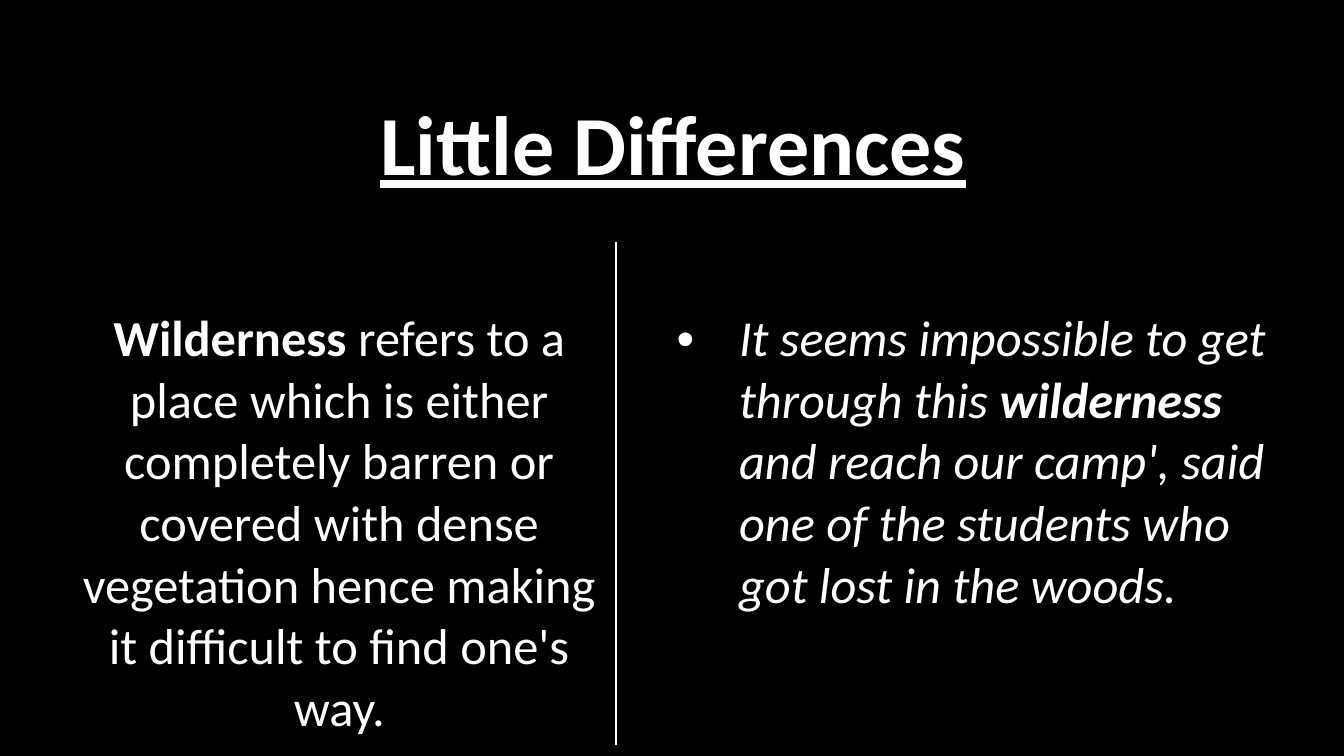
from pptx import Presentation
from pptx.dml.color import RGBColor
from pptx.enum.text import MSO_ANCHOR, PP_ALIGN
from pptx.oxml.ns import qn
from pptx.util import Inches, Pt
from lxml import etree

CENTER, LEFT = PP_ALIGN.CENTER, PP_ALIGN.LEFT
TOP = MSO_ANCHOR.TOP
BLANK_LAYOUT = 6
EDGES = ("lnL", "lnR", "lnT", "lnB")


def color(hex_value):
    return RGBColor.from_string(hex_value)


class SlideBuilder:
    font = "Calibri"
    text_color = "FFFFFF"
    background = "000000"
    cell_top = 0.66  # one 36 pt line above the text

    def __init__(self, presentation):
        self.slide = presentation.slides.add_slide(presentation.slide_layouts[BLANK_LAYOUT])
        fill = self.slide.background.fill
        fill.solid()
        fill.fore_color.rgb = color(self.background)

    def table(self, left, top, widths, heights):
        frame = self.slide.shapes.add_table(
            len(heights), len(widths), Inches(left), Inches(top),
            Inches(sum(widths)), Inches(sum(heights)))
        table = frame.table
        table.first_row = table.horz_banding = False
        for column, width in zip(table.columns, widths):
            column.width = Inches(width)
        for row, height in zip(table.rows, heights):
            row.height = Inches(height)
        return table

    def cell_style(self, cell, lined_edge=None):
        properties = cell._tc.get_or_add_tcPr()
        for edge in EDGES:
            line = etree.SubElement(properties, qn(f"a:{edge}"), w=str(Pt(1)))
            if edge == lined_edge:
                solid = etree.SubElement(line, qn("a:solidFill"))
                etree.SubElement(solid, qn("a:srgbClr"), val=self.text_color)
            else:
                etree.SubElement(line, qn("a:noFill"))
        cell.fill.background()
        cell.vertical_anchor = TOP
        cell.margin_top = Inches(self.cell_top)

    def text(self, cell, runs, size=36, align=CENTER, **common):
        paragraph = cell.text_frame.paragraphs[0]
        paragraph.alignment = align
        for words, bold in runs:
            run = paragraph.add_run()
            run.text = words
            font = run.font
            font.name, font.size, font.bold = self.font, Pt(size), bold
            font.color.rgb = color(self.text_color)
            for name, value in common.items():
                setattr(font, name, value)
        return paragraph

    def bullet(self, paragraph, margin, indent):
        paragraph.level = 1
        properties = paragraph._p.get_or_add_pPr()
        properties.set("marL", str(Inches(margin)))
        properties.set("indent", str(Inches(indent)))
        etree.SubElement(properties, qn("a:buFont"), typeface="Arial")
        etree.SubElement(properties, qn("a:buChar"), char="•")


def main():
    presentation = Presentation()
    presentation.slide_width, presentation.slide_height = Inches(13.33), Inches(7.5)
    builder = SlideBuilder(presentation)

    # Table: heading across the top, definition and example below
    table = builder.table(0.62, 0.29, widths=(5.49, 6.62), heights=(2.11, 4.9))
    heading, heading_end = table.cell(0, 0), table.cell(0, 1)
    definition, example = table.cell(1, 0), table.cell(1, 1)
    heading.merge(heading_end)
    builder.cell_style(heading)
    builder.cell_style(heading_end)
    builder.cell_style(definition, lined_edge="lnR")
    builder.cell_style(example, lined_edge="lnL")

    # Heading
    builder.text(heading, [("Little Differences", True)], size=60, underline=True)

    # Definition
    builder.text(definition, [
        ("Wilderness", True),
        (" refers to a place which is either completely barren or covered with "
         "dense vegetation hence making it difficult to find one's way.", False)])

    # Example sentence
    sentence = builder.text(example, [
        ("It seems impossible to get through this ", False),
        ("wilderness", True),
        (" and reach our camp', said one of the students who got lost in the woods.", False),
    ], align=LEFT, italic=True)
    builder.bullet(sentence, margin=1.12, indent=-0.62)

    presentation.save("out.pptx")


if __name__ == "__main__":
    main()
